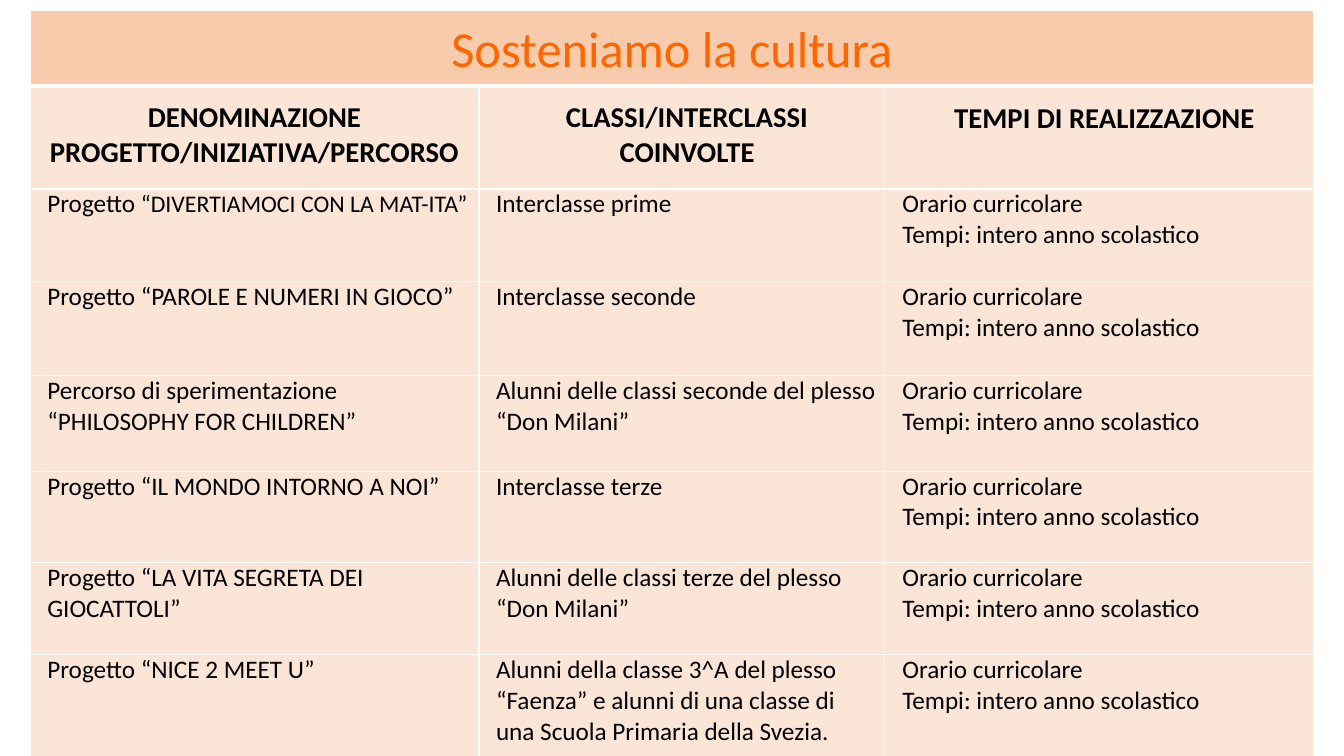
"""Build the slide listing the school's culture projects."""
from dataclasses import dataclass

from lxml.etree import SubElement
from pptx import Presentation
from pptx.dml.color import RGBColor
from pptx.enum.text import PP_ALIGN as Align
from pptx.oxml.ns import qn
from pptx.table import _Cell as Cell
from pptx.util import Inches, Pt

ORANGE = RGBColor(0xFF, 0x66, 0x00)
PEACH = RGBColor(0xF8, 0xCB, 0xAD)
PALE_PEACH = RGBColor(0xFB, 0xE5, 0xD6)
BLACK = RGBColor(0, 0, 0)
WHITE = RGBColor(0xFF, 0xFF, 0xFF)

COLUMN_WIDTHS = (4.45, 4.01, 4.27)
ROW_HEIGHTS = (0.75, 1.02, 0.92, 0.93, 0.95, 0.91, 0.91, 1.01)
BODY_INDENTS = (0.17, 0.17, 0.19)
SCHEDULE = "Orario curricolare\nTempi: intero anno scolastico"


@dataclass(frozen=True)
class CellStyle:
    size: float
    left: float = 0.07
    right: float = 0.07
    top: float = 0
    bottom: float = 0
    bold: bool = False
    align: Align = Align.LEFT
    color: RGBColor = BLACK
    fill: RGBColor = PALE_PEACH
    spacing: float = 1.0
    top_line: float = 1
    bottom_line: float = 1


@dataclass(frozen=True)
class Heading:
    text: str
    left: float
    top: float


@dataclass(frozen=True)
class Project:
    label: str
    classes: str
    small_name: str = ""


HEADINGS = (
    Heading("DENOMINAZIONE\nPROGETTO/INIZIATIVA/PERCORSO", 0.07, 0.14),
    Heading("CLASSI/INTERCLASSI\nCOINVOLTE", 0.19, 0.14),
    Heading("TEMPI DI REALIZZAZIONE", 0.19, 0.15),
)
PROJECTS = (
    Project("Progetto ", "Interclasse prime", "“DIVERTIAMOCI CON LA MAT-ITA”"),
    Project("Progetto “PAROLE E NUMERI IN GIOCO”", "Interclasse seconde"),
    Project("Percorso di sperimentazione “PHILOSOPHY FOR CHILDREN”",
            "Alunni delle classi seconde del plesso “Don Milani”"),
    Project("Progetto “IL MONDO INTORNO A NOI”", "Interclasse terze"),
    Project("Progetto “LA VITA SEGRETA DEI GIOCATTOLI”",
            "Alunni delle classi terze del plesso “Don Milani”"),
    Project("Progetto “NICE 2 MEET U”",
            "Alunni della classe 3^A del plesso “Faenza” e alunni di una "
            "classe di una Scuola Primaria della Svezia."),
)


def draw_borders(cell: Cell, style: CellStyle) -> None:
    properties = cell._tc.get_or_add_tcPr()
    widths = {"L": 1, "R": 1, "T": style.top_line, "B": style.bottom_line}
    for side, width in widths.items():
        border = SubElement(properties, qn(f"a:ln{side}"), w=str(Pt(width)))
        SubElement(SubElement(border, qn("a:solidFill")), qn("a:srgbClr"), val=str(WHITE))


def style_cell(cell: Cell, style: CellStyle) -> None:
    draw_borders(cell, style)
    cell.fill.solid()
    cell.fill.fore_color.rgb = style.fill
    cell.margin_left, cell.margin_right = Inches(style.left), Inches(style.right)
    cell.margin_top, cell.margin_bottom = Inches(style.top), Inches(style.bottom)


def write_cell(cell: Cell, text: str, style: CellStyle) -> None:
    style_cell(cell, style)
    cell.text_frame.text = text
    for paragraph in cell.text_frame.paragraphs:
        paragraph.alignment = style.align
        paragraph.line_spacing = style.spacing
        for run in paragraph.runs:
            format_run(run.font, style.size, style)


def format_run(font, size: float, style: CellStyle) -> None:
    font.name = "Calibri"
    font.size = Pt(size)
    font.bold = style.bold
    font.color.rgb = style.color


def main() -> None:
    presentation = Presentation()
    presentation.slide_width, presentation.slide_height = Inches(13.33), Inches(7.5)
    slide = presentation.slides.add_slide(presentation.slide_layouts[6])
    programme = slide.shapes.add_table(
        len(ROW_HEIGHTS), len(COLUMN_WIDTHS), Inches(0.3), Inches(0.1),
        Inches(sum(COLUMN_WIDTHS)), Inches(sum(ROW_HEIGHTS))).table
    for column, width in zip(programme.columns, COLUMN_WIDTHS):
        column.width = Inches(width)
    for row, height in zip(programme.rows, ROW_HEIGHTS):
        row.height = Inches(height)

    title_style = CellStyle(36, 0.1, 0.1, 0.05, 0.05, align=Align.CENTER, color=ORANGE,
                            fill=PEACH, spacing=1.07, bottom_line=3)
    title = programme.cell(0, 0)
    title.merge(programme.cell(0, 2))
    write_cell(title, "Sosteniamo la cultura", title_style)
    for column in (1, 2):
        style_cell(programme.cell(0, column), title_style)

    for column, heading in enumerate(HEADINGS):
        write_cell(programme.cell(1, column), heading.text,
                   CellStyle(20.5, heading.left, top=heading.top, bold=True,
                             align=Align.CENTER, top_line=3))

    body_styles = [CellStyle(18, indent) for indent in BODY_INDENTS]
    for row, project in enumerate(PROJECTS, start=2):
        texts = (project.label, project.classes, SCHEDULE)
        for column, (text, style) in enumerate(zip(texts, body_styles)):
            write_cell(programme.cell(row, column), text, style)
        if project.small_name:
            name = programme.cell(row, 0).text_frame.paragraphs[0].add_run()
            name.text = project.small_name
            format_run(name.font, 17, body_styles[0])

    presentation.save("out.pptx")


if __name__ == "__main__":
    main()
